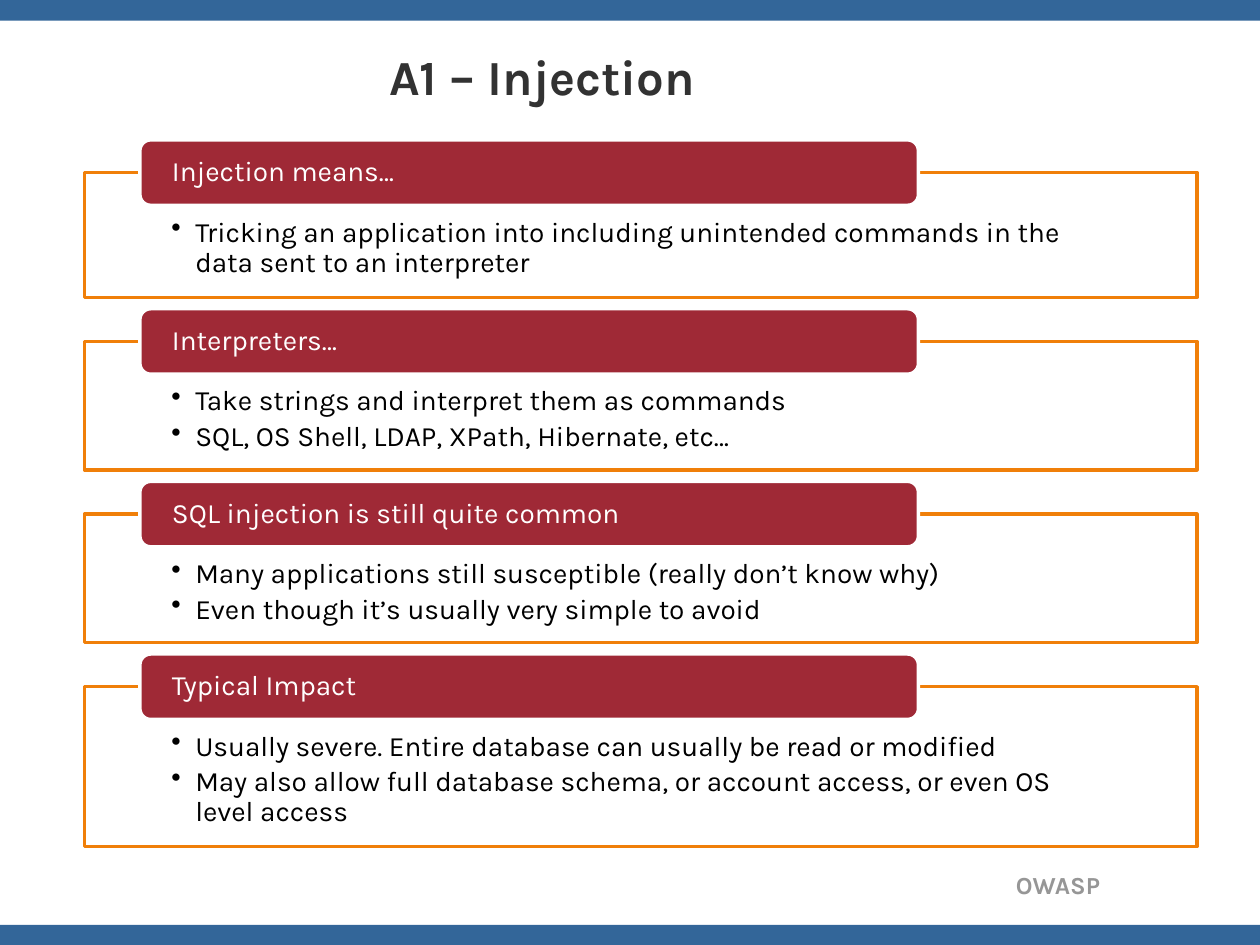
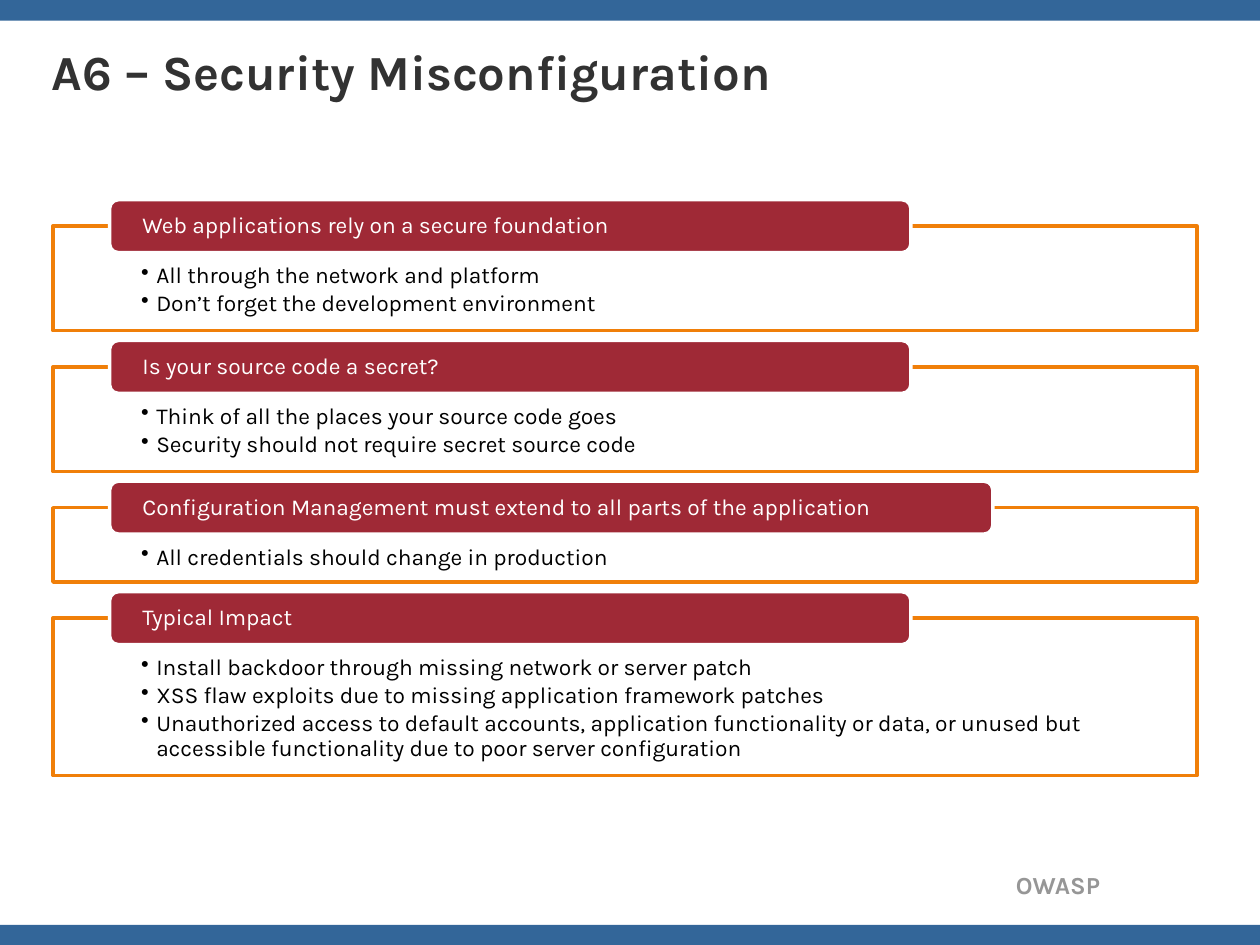
from lxml.etree import SubElement
from pptx import Presentation
from pptx.dml.color import RGBColor
from pptx.enum.shapes import MSO_SHAPE
from pptx.enum.text import MSO_ANCHOR, PP_ALIGN
from pptx.oxml.ns import qn
from pptx.util import Inches, Pt

WIDTH, HEIGHT = Inches(10), Inches(7.5)
COLUMNS, ROWS = 100, 75
FONT = "Karla"
BLUE = RGBColor(0x33, 0x66, 0x99)
RED = RGBColor(0x9F, 0x29, 0x36)
ORANGE = RGBColor(0xF0, 0x7F, 0x09)
WHITE = RGBColor(0xFF, 0xFF, 0xFF)
BLACK = RGBColor(0x00, 0x00, 0x00)
CHARCOAL = RGBColor(0x32, 0x32, 0x32)
GRAY = RGBColor(0x96, 0x96, 0x96)

INJECTION = {
    "title": "A1 – Injection",
    "title_area": (29.9, 2, 75.6, 8.1),
    "left": 6.7, "top": 13.7, "width": 88.3, "gap": 3.5,
    "tab_left": 11.1, "tab_height": 5.2, "tab_inset": 2.3,
    "insets": (6.9, 3.6, 6.9, 1.2),
    "size": 16, "hang": 1.9, "space_after": 3,
    "sections": [
        ("Injection means…", 61.8, 9.9, [
            "Tricking an application into including unintended commands in the data sent to an interpreter"]),
        ("Interpreters…", 61.8, 10.2, [
            "Take strings and interpret them as commands",
            "SQL, OS Shell, LDAP, XPath, Hibernate, etc…"]),
        ("SQL injection is still quite common", 61.8, 10.2, [
            "Many applications still susceptible (really don’t know why)",
            "Even though it’s usually very simple to avoid"]),
        ("Typical Impact", 61.8, 12.7, [
            "Usually severe. Entire database can usually be read or modified",
            "May also allow full database schema, or account access, or even OS level access"]),
    ],
}

MISCONFIGURATION = {
    "title": "A6 – Security Misconfiguration",
    "title_area": (3.1, 1.6, 100.9, 8.1),
    "left": 4.2, "top": 17.95, "width": 90.8, "gap": 2.87,
    "tab_left": 8.7, "tab_height": 4.2, "tab_inset": 2.4,
    "insets": (7, 3, 7, 1),
    "size": 13, "hang": 1.2, "space_after": 2,
    "sections": [
        ("Web applications rely on a secure foundation", 63.6, 8.3, [
            "All through the network and platform",
            "Don’t forget the development environment"]),
        ("Is your source code a secret?", 63.6, 8.3, [
            "Think of all the places your source code goes",
            "Security should not require secret source code"]),
        ("Configuration Management must extend to all parts of the application", 70.1, 5.9, [
            "All credentials should change in production"]),
        ("Typical Impact", 63.6, 12.5, [
            "Install backdoor through missing network or server patch",
            "XSS flaw exploits due to missing application framework patches",
            "Unauthorized access to default accounts, application functionality or data, "
            "or unused but accessible functionality due to poor server configuration"]),
    ],
}


def across(columns):
    """Return the length of a number of grid columns."""
    return round(WIDTH * columns / COLUMNS)


def down(rows):
    """Return the length of a number of grid rows."""
    return round(HEIGHT * rows / ROWS)


def place(area):
    """Turn left, top, width and height on the grid into lengths."""
    left, top, width, height = area
    return across(left), down(top), across(width), down(height)


def add_bullet(paragraph, hang):
    """Give a paragraph a round bullet with a hanging indent."""
    properties = paragraph._p.get_or_add_pPr()
    properties.set("marL", str(across(hang)))
    properties.set("indent", str(-across(hang)))
    SubElement(properties, qn("a:buChar"), char="•")


def write(shape, lines, size, color, bold=False, align=PP_ALIGN.LEFT, anchor=MSO_ANCHOR.TOP,
          insets=(1, 0.5, 1, 0.5), hang=None, line_spacing=None, space_after=0):
    """Write one paragraph per line into a shape."""
    frame = shape.text_frame
    frame.word_wrap = True
    frame.vertical_anchor = anchor
    left, top, right, bottom = insets
    frame.margin_left, frame.margin_right = across(left), across(right)
    frame.margin_top, frame.margin_bottom = down(top), down(bottom)
    for index, line in enumerate(lines):
        paragraph = frame.add_paragraph() if index else frame.paragraphs[0]
        if hang:
            add_bullet(paragraph, hang)
        paragraph.alignment = align
        paragraph.line_spacing = line_spacing
        paragraph.space_after = Pt(space_after)
        run = paragraph.add_run()
        run.text = line
        run.font.name = FONT
        run.font.size = Pt(size)
        run.font.bold = bold
        run.font.color.rgb = color


def add_box(slide, kind, area, fill, line=None, opacity=None):
    """Add a filled shape, with an outline if a line colour is given."""
    shape = slide.shapes.add_shape(kind, *place(area))
    shape.shadow.inherit = False
    shape.fill.solid()
    shape.fill.fore_color.rgb = fill
    if opacity:
        color = shape._element.spPr.find(qn("a:solidFill"))[0]
        SubElement(color, qn("a:alpha"), val=str(opacity * 1000))
    if line is None:
        shape.line.fill.background()
    else:
        shape.line.color.rgb = line
        shape.line.width = Pt(2)
    return shape


def add_base_slide(presentation, title, title_area):
    """Add a slide with its bands, footer and title."""
    slide = presentation.slides.add_slide(presentation.slide_layouts[6])
    for top in (0, 73.4):
        add_box(slide, MSO_SHAPE.RECTANGLE, (0, top, COLUMNS, 1.65), BLUE)
    footer = slide.shapes.add_textbox(*place((62.2, 68.6, 26.1, 3.3)))
    write(footer, ["OWASP"], 14, GRAY, bold=True, align=PP_ALIGN.RIGHT)
    heading = slide.shapes.add_textbox(*place(title_area))
    write(heading, [title], 28, CHARCOAL, bold=True, anchor=MSO_ANCHOR.MIDDLE)
    return slide


def add_section(slide, topic, top, section):
    """Add a framed bullet list with a tab centred on its upper edge."""
    label, tab_width, height, bullets = section
    frame = add_box(slide, MSO_SHAPE.RECTANGLE, (topic["left"], top, topic["width"], height),
                    WHITE, line=ORANGE, opacity=90)
    write(frame, bullets, topic["size"], BLACK, insets=topic["insets"], hang=topic["hang"],
          line_spacing=0.9, space_after=topic["space_after"])
    tab_height, inset = topic["tab_height"], topic["tab_inset"]
    tab = add_box(slide, MSO_SHAPE.ROUNDED_RECTANGLE,
                  (topic["tab_left"], top - tab_height / 2, tab_width, tab_height), RED, line=WHITE)
    write(tab, [label], topic["size"], WHITE, anchor=MSO_ANCHOR.MIDDLE,
          insets=(inset, 0, inset, 0), line_spacing=0.9)


def add_topic_slide(presentation, topic):
    """Add a slide that stacks the sections of a topic with equal gaps."""
    slide = add_base_slide(presentation, topic["title"], topic["title_area"])
    top = topic["top"]
    for section in topic["sections"]:
        add_section(slide, topic, top, section)
        top += section[2] + topic["gap"]


def main():
    """Build and save the presentation."""
    presentation = Presentation()
    presentation.slide_width, presentation.slide_height = WIDTH, HEIGHT
    for topic in (INJECTION, MISCONFIGURATION):
        add_topic_slide(presentation, topic)
    presentation.save("out.pptx")


if __name__ == "__main__":
    main()
